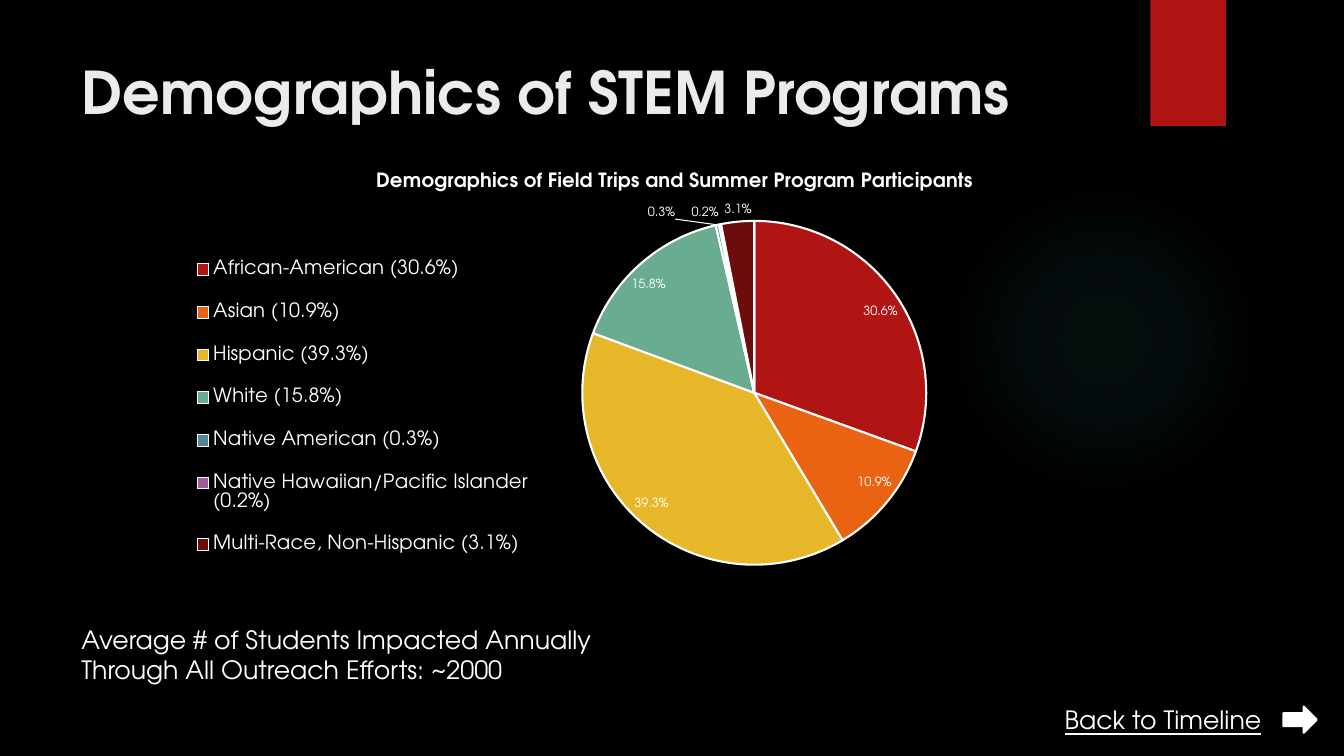
"""Build the slide on the demographics of STEM programs."""
from lxml import etree
from pptx import Presentation
from pptx.chart.data import CategoryChartData
from pptx.dml.color import RGBColor
from pptx.enum.chart import XL_CHART_TYPE, XL_LABEL_POSITION, XL_LEGEND_POSITION
from pptx.enum.shapes import MSO_SHAPE
from pptx.enum.text import MSO_ANCHOR, PP_ALIGN
from pptx.oxml import parse_xml
from pptx.util import Inches, Pt

PIE = XL_CHART_TYPE.PIE
BEST = XL_LABEL_POSITION.BEST_FIT
BOTTOM = XL_LEGEND_POSITION.BOTTOM
OVAL, RECT, ARROW = MSO_SHAPE.OVAL, MSO_SHAPE.RECTANGLE, MSO_SHAPE.RIGHT_ARROW
TOP = MSO_ANCHOR.TOP
LEFT, CENTER = PP_ALIGN.LEFT, PP_ALIGN.CENTER
FACE = "TeX Gyre Adventor"
WHITE, RED = "FFFFFF", "B01513"
A = "http://schemas.openxmlformats.org/drawingml/2006/main"
C = "http://schemas.openxmlformats.org/drawingml/2006/chart"
GROUPS = [
    ("African-American (30.6%)", 0.306, RED),
    ("Asian (10.9%)", 0.109, "EA6312"),
    ("Hispanic (39.3%)", 0.393, "E6B729"),
    ("White (15.8%)", 0.158, "6AAC90"),
    ("Native American (0.3%)", 0.003, "54849A"),
    ("Native Hawaiian/Pacific Islander (0.2%)", 0.002, "9E5E9B"),
    ("Multi-Race, Non-Hispanic (3.1%)", 0.031, "6A0D0B"),
]


def paint(fmt, tint):
    """Give a fill a solid colour."""
    fmt.solid()
    fmt.fore_color.rgb = RGBColor.from_string(tint)


def style(font, size, tint=WHITE, bold=False):
    """Set face, size, colour and weight of a font."""
    font.name, font.size, font.bold = FACE, Pt(size), bold
    font.color.rgb = RGBColor.from_string(tint)


deck = Presentation()
deck.slide_width, deck.slide_height = Inches(13.33), Inches(7.5)
slide = deck.slides.add_slide(deck.slide_layouts[5])
paint(slide.background.fill, "000000")
shapes = slide.shapes

glow = shapes.add_shape(OVAL, Inches(9.41), Inches(1.83), Inches(3.08), Inches(3.08))
glow.shadow.inherit = False
glow.line.fill.background()
glow.fill.gradient()
stops = "".join(
    f'<a:gs pos="{pos}000"><a:srgbClr val="50B9C1"><a:alpha val="{alpha}000"/></a:srgbClr></a:gs>'
    for pos, alpha in [(0, 7), (36, 6), (69, 0), (100, 0)])
fade = parse_xml(
    f'<a:gradFill xmlns:a="{A}" rotWithShape="1"><a:gsLst>{stops}</a:gsLst><a:path path="circle">'
    '<a:fillToRect l="50000" t="50000" r="50000" b="50000"/></a:path></a:gradFill>')
old = glow.element.spPr.find(f"{{{A}}}gradFill")
old.getparent().replace(old, fade)

tab = shapes.add_shape(RECT, Inches(11.41), 0, Inches(0.75), Inches(1.25))
tab.shadow.inherit = False
paint(tab.fill, RED)
tab.line.fill.background()

title = shapes.title
title.left, title.top, title.width, title.height = map(Inches, (0.71, 0.5, 10.29, 1.53))
title.text_frame.text = "Demographics of STEM Programs"
title.text_frame.vertical_anchor = TOP
head = title.text_frame.paragraphs[0]
head.alignment = LEFT
style(head.font, 42, "EBEBEB", True)

for text, spot, align, under in [
    ("Back to Timeline", (10.45, 6.94, 2.17, 0.4), CENTER, True),
    ("Average # of Students Impacted Annually Through All Outreach Efforts: ~2000",
     (0.71, 6.14, 5.5, 0.71), LEFT, False),
]:
    frame = shapes.add_textbox(*map(Inches, spot)).text_frame
    frame.word_wrap = True
    frame.text = text
    para = frame.paragraphs[0]
    para.alignment = align
    style(para.font, 18)
    para.font.underline = under

arrow = shapes.add_shape(ARROW, Inches(12.73), Inches(7.01), Inches(0.33), Inches(0.26))
arrow.shadow.inherit = False
paint(arrow.fill, WHITE)
paint(arrow.line.fill, WHITE)
arrow.line.width = Pt(1.5)

data = CategoryChartData(number_format="0.0%")
data.categories = [name for name, share, tint in GROUPS]
data.add_series("Series 1", [share for name, share, tint in GROUPS])
chart = shapes.add_chart(
    PIE, Inches(1.62), Inches(1.5), Inches(10.15), Inches(4.98), data).chart
style(chart.font, 10)
chart.has_title = True
chart.chart_title.text_frame.text = "Demographics of Field Trips and Summer Program Participants"
style(chart.chart_title.text_frame.paragraphs[0].font, 14, bold=True)
chart.has_legend = True
legend = chart.legend
legend.position, legend.include_in_layout = BOTTOM, False
style(legend.font, 14)

plot = chart.plots[0]
plot.vary_by_categories = True
series = plot.series[0]
for i, (name, share, tint) in enumerate(GROUPS):
    slice_ = series.points[i].format
    paint(slice_.fill, tint)
    paint(slice_.line.fill, WHITE)
    slice_.line.width = Pt(1.5)

labels = series.data_labels
labels.show_value = True
labels.number_format, labels.number_format_is_linked = "0.0%", False
labels.position = BEST
style(labels.font, 9)
moved = series.points[4].data_label
style(moved.font, 9)
moved.position = BEST

root = chart.element
label = root.find(f".//{{{C}}}dLbl")
label.insert(1, parse_xml(
    f'<c:layout xmlns:c="{C}"><c:manualLayout><c:x val="-0.04"/><c:y val="0"/>'
    '</c:manualLayout></c:layout>'))
label.insert(2, parse_xml(f'<c:numFmt xmlns:c="{C}" formatCode="0.0%" sourceLinked="0"/>'))
label.getparent().append(parse_xml(
    f'<c:leaderLines xmlns:c="{C}" xmlns:a="{A}"><c:spPr><a:ln w="9525"><a:solidFill>'
    f'<a:srgbClr val="{WHITE}"/></a:solidFill></a:ln></c:spPr></c:leaderLines>'))

for area, inner, place in [
    (root.find(f".//{{{C}}}plotArea"), True, (0.403, 0.139, 0.349, 0.685)),
    (root.find(f".//{{{C}}}legend"), False, (0.02, 0.17, 0.35, 0.68)),
]:
    for stale in area.findall(f"{{{C}}}layout"):
        area.remove(stale)
    layout = etree.Element(f"{{{C}}}layout")
    manual = etree.SubElement(layout, f"{{{C}}}manualLayout")
    rules = [("layoutTarget", "inner")] if inner else []
    rules += [("xMode", "edge"), ("yMode", "edge"), *zip("xywh", place)]
    for key, val in rules:
        etree.SubElement(manual, f"{{{C}}}{key}", val=str(val))
    area.insert(0 if inner else 1, layout)

deck.save("out.pptx")
